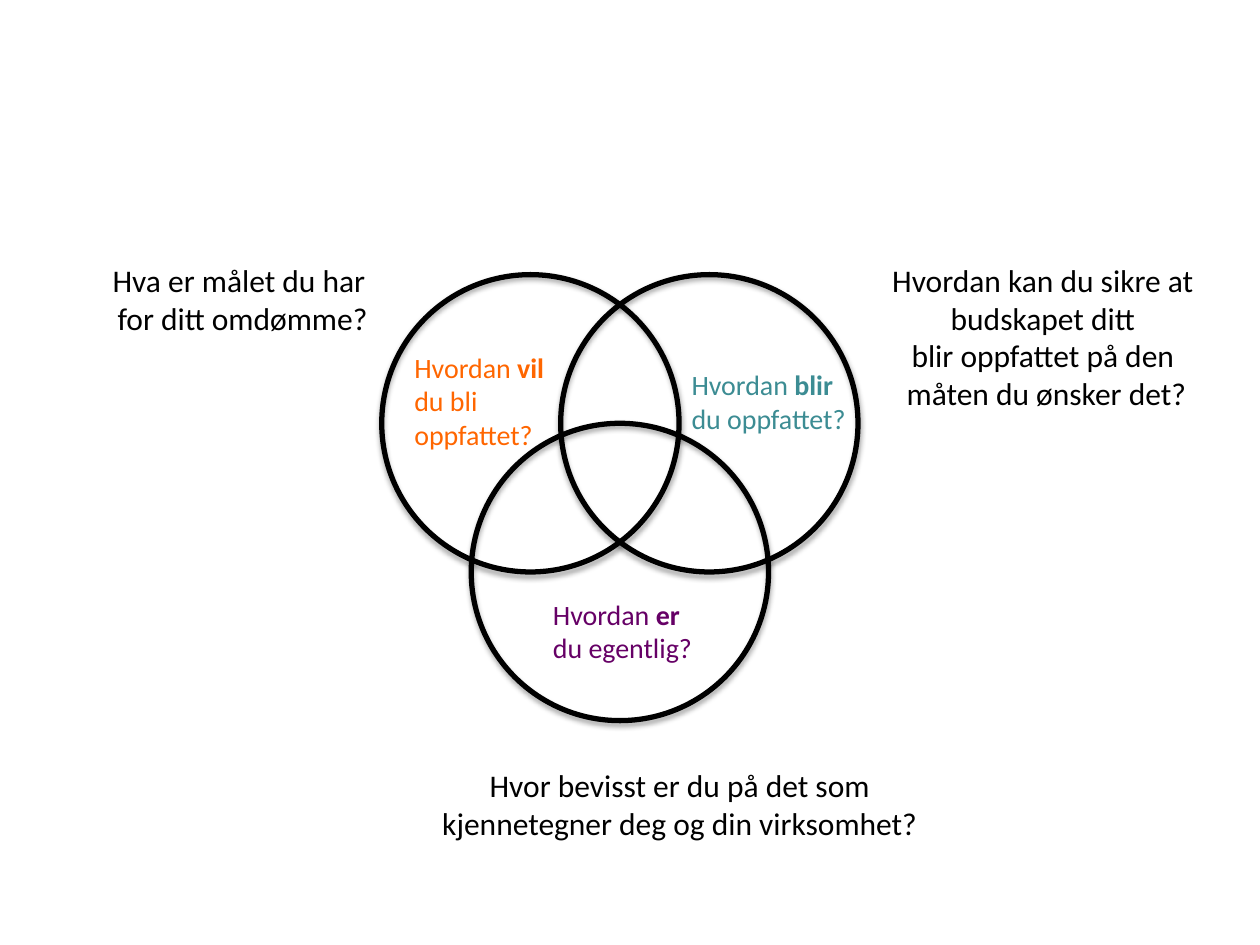
from lxml import etree
from pptx import Presentation
from pptx.dml.color import RGBColor
from pptx.enum.shapes import MSO_SHAPE
from pptx.enum.text import MSO_AUTO_SIZE, PP_ALIGN
from pptx.oxml.ns import qn
from pptx.util import Inches, Pt

OVAL = MSO_SHAPE.OVAL
CENTER = PP_ALIGN.CENTER
LEFT = PP_ALIGN.LEFT
GROW = MSO_AUTO_SIZE.SHAPE_TO_FIT_TEXT

FONT = "Calibri"
COLORS = {
    "black": "000000",
    "orange": "FF6600",
    "teal": "3C8C93",
    "purple": "660066",
}
SIZE = 2.36  # circle diameter
LABEL_W = 4.09
NOTE_W = 4.41

# Circle left, top; label left, top, height; colour; lines with (text, bold) runs
RINGS = [
    (3.03, 2.18, 3.19, 2.73, 0.91, "orange",
     [[("Hvordan ", False), ("vil", True)], [("du bli", False)], [("oppfattet?", False)]]),
    (4.45, 2.18, 5.39, 2.87, 0.64, "teal",
     [[("Hvordan ", False), ("blir", True)], [("du oppfattet?", False)]]),
    (3.74, 3.36, 4.29, 4.69, 0.64, "purple",
     [[("Hvordan ", False), ("er", True)], [("du egentlig?", False)]]),
]

# Left, top, height, lines
NOTES = [
    (3.19, 6.03, 0.71,
     ["Hvor bevisst er du på det som kjennetegner deg og din virksomhet?"]),
    (-0.28, 2.02, 0.71, ["Hva er målet du har ", "for ditt omdømme?"]),
    (6.1, 2.02, 1.31,
     ["Hvordan kan du sikre at ", "budskapet ditt ",
      "blir oppfattet på den ", "måten du ønsker det?"]),
]


def rgb(name):
    return RGBColor.from_string(COLORS[name])


def add_shadow(shape):
    """Soft black shadow falling straight down."""
    shape.shadow.inherit = False
    effects = shape._element.spPr.find(qn("a:effectLst"))
    outer = etree.SubElement(
        effects, qn("a:outerShdw"), blurRad=str(Pt(3.1)), dist=str(Pt(1.8)),
        dir="5400000", rotWithShape="0")
    color = etree.SubElement(outer, qn("a:srgbClr"), val=COLORS["black"])
    etree.SubElement(color, qn("a:alpha"), val="35000")


def add_ring(shapes, left, top):
    ring = shapes.add_shape(
        OVAL, Inches(left), Inches(top), Inches(SIZE), Inches(SIZE))
    ring.fill.background()
    ring.line.color.rgb = rgb("black")
    ring.line.width = Pt(3)
    add_shadow(ring)


def add_text(shapes, left, top, width, height, lines, size, color, align):
    box = shapes.add_textbox(
        Inches(left), Inches(top), Inches(width), Inches(height))
    frame = box.text_frame
    frame.word_wrap = True
    frame.auto_size = GROW
    for i, line in enumerate(lines):
        para = frame.add_paragraph() if i else frame.paragraphs[0]
        para.alignment = align
        para.font.name = FONT
        para.font.size = Pt(size)
        para.font.color.rgb = rgb(color)
        for text, bold in line:
            run = para.add_run()
            run.text = text
            if bold:
                run.font.bold = True


def main():
    prs = Presentation()
    prs.slide_width, prs.slide_height = Inches(10), Inches(7.5)
    slide = prs.slides.add_slide(prs.slide_layouts[6])

    # Overlapping circles, each grouped with its label
    for left, top, text_x, text_y, height, color, lines in RINGS:
        group = slide.shapes.add_group_shape()
        add_ring(group.shapes, left, top)
        add_text(group.shapes, text_x, text_y, LABEL_W, height,
                 lines, 16, color, LEFT)

    # Questions around the diagram
    for left, top, height, lines in NOTES:
        add_text(slide.shapes, left, top, NOTE_W, height,
                 [[(line, False)] for line in lines], 18, "black", CENTER)

    prs.save("out.pptx")


if __name__ == "__main__":
    main()
